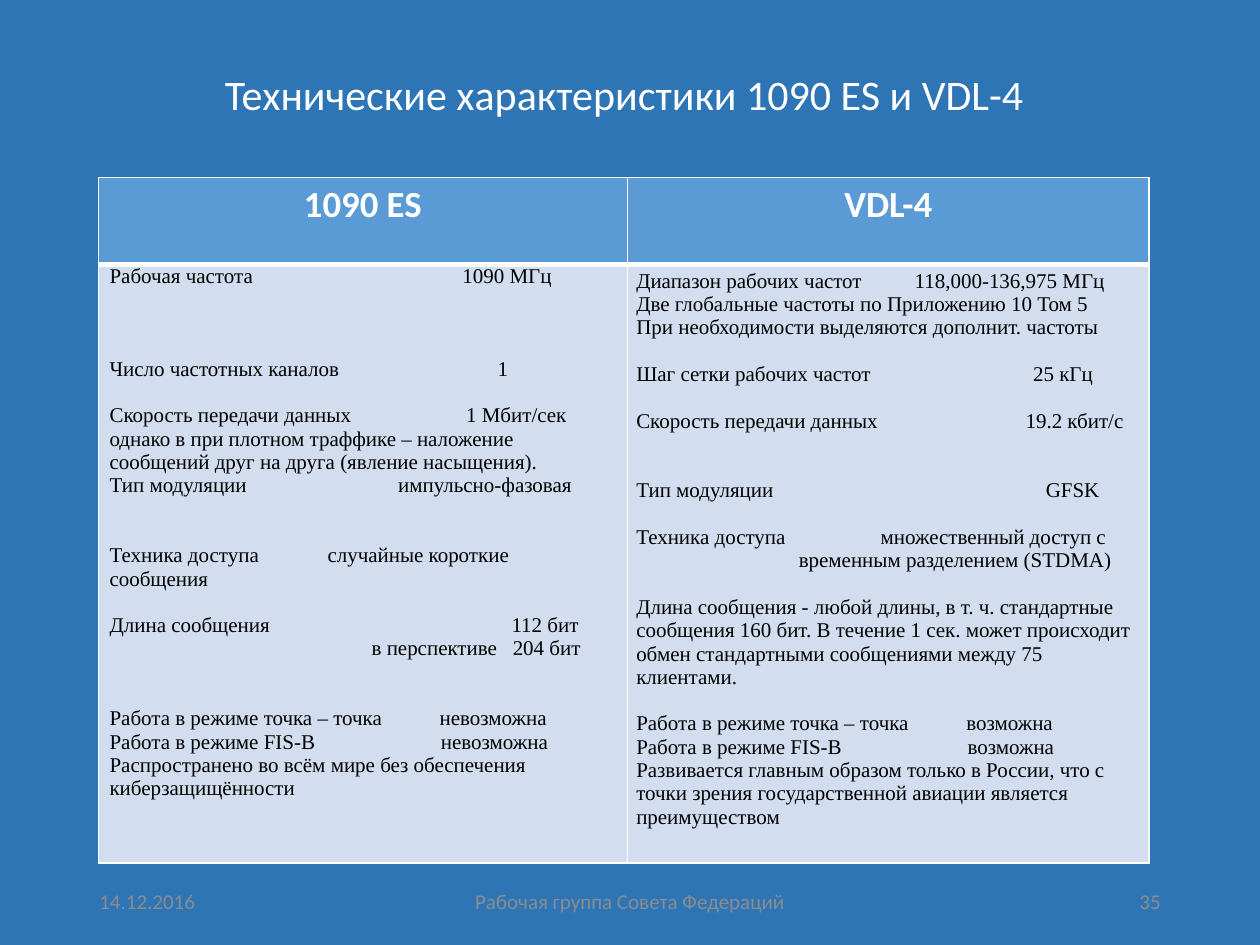
from dataclasses import dataclass

from lxml.etree import SubElement
from pptx import Presentation
from pptx.dml.color import RGBColor
from pptx.enum.text import MSO_ANCHOR as Anchor, PP_ALIGN as Align
from pptx.oxml.ns import qn
from pptx.util import Inches, Pt

COLORS = {
    "page": "2E75B6",
    "header": "5B9BD5",
    "body": "D2DEEF",
    "white": "FFFFFF",
    "black": "000000",
    "footer": "8C8C8C",
}
LINE_PITCH = 13.3


@dataclass(frozen=True)
class Style:
    size: float
    color: str
    font: str = "Calibri"
    bold: bool = False


@dataclass(frozen=True)
class Label:
    text: str
    box: tuple[float, float, float, float]
    style: Style
    align: Align
    spacing: float = 1.0


@dataclass(frozen=True)
class Entry:
    text: str
    tabs: tuple[float, ...] = ()
    gap: int = 0


@dataclass(frozen=True)
class Column:
    heading: str
    width: float
    insets: tuple[float, float]
    entries: tuple[Entry, ...]


TITLE = Style(24, "white")
HEADING = Style(21, "white", bold=True)
BODY = Style(12, "black", "Times New Roman")
FOOTER = Style(12, "footer")

LABELS = [
    Label("Технические характеристики 1090 ES и VDL-4",
          (0.81, 0.22, 8.29, 1.09), TITLE, Align.CENTER, 0.9),
    Label("14.12.2016", (0.69, 6.95, 2.25, 0.4), FOOTER, Align.LEFT),
    Label("Рабочая группа Совета Федераций",
          (3.31, 6.95, 3.38, 0.4), FOOTER, Align.CENTER),
    Label("35", (7.06, 6.95, 2.25, 0.4), FOOTER, Align.RIGHT),
]

COLUMNS = [
    Column("1090 ES", 4.2, (0.09, 0), (
        Entry("Рабочая частота\t1090 МГц", (2.8,)),
        Entry("Число частотных каналов\t1", (3.08,), 3),
        Entry("Скорость передачи данных\t1 Мбит/сек", (2.83,), 1),
        Entry("однако в при плотном траффике – наложение "
              "сообщений друг на друга (явление насыщения)."),
        Entry("Тип модуляции\tимпульсно-фазовая", (2.29,)),
        Entry("Техника доступа\tслучайные короткие\vсообщения", (1.73,), 2),
        Entry("Длина сообщения\t112 бит", (3.19,), 1),
        Entry("\tв перспективе\t204 бит", (2.08, 3.2)),
        Entry("Работа в режиме точка – точка\tневозможна", (2.62,), 2),
        Entry("Работа в режиме FIS-B\tневозможна", (2.63,)),
        Entry("Распространено во всём мире без обеспечения киберзащищённости"),
    )),
    Column("VDL-4", 4.14, (0.07, 0.04), (
        Entry("Диапазон рабочих частот\t118,000-136,975 МГц", (2.21,)),
        Entry("Две глобальные частоты по Приложению 10 Том 5"),
        Entry("При необходимости выделяются дополнит. частоты"),
        Entry("Шаг сетки рабочих частот\t25 кГц", (3.15,), 1),
        Entry("Скорость передачи данных\t19.2 кбит/с", (3.09,), 1),
        Entry("Тип модуляции\tGFSK", (3.25,), 2),
        Entry("Техника доступа\tмножественный доступ с", (1.94,), 1),
        Entry("\tвременным разделением (STDMA)", (1.29,)),
        Entry("Длина сообщения - любой длины, в т. ч. стандартные "
              "сообщения 160 бит. В течение 1 сек. может происходит "
              "обмен стандартными сообщениями между 75 клиентами.", gap=1),
        Entry("Работа в режиме точка – точка\tвозможна", (2.62,), 1),
        Entry("Работа в режиме FIS-B\tвозможна", (2.63,)),
        Entry("Развивается главным образом только в России, что с "
              "точки зрения государственной авиации является преимуществом"),
    )),
]


def rgb(name: str) -> RGBColor:
    return RGBColor.from_string(COLORS[name])


def write(para, text: str, style: Style, align: Align) -> None:
    para.text = text
    para.alignment = align
    for span in para.runs:
        span.font.size = Pt(style.size)
        span.font.name = style.font
        span.font.bold = style.bold
        span.font.color.rgb = rgb(style.color)


def add_label(page, label: Label) -> None:
    box = page.shapes.add_textbox(*map(Inches, label.box))
    frame = box.text_frame
    frame.word_wrap = True
    frame.vertical_anchor = Anchor.MIDDLE
    para = frame.paragraphs[0]
    write(para, label.text, label.style, label.align)
    para.line_spacing = label.spacing


def set_tabs(para, tabs: tuple[float, ...]) -> None:
    stops = SubElement(para._p.get_or_add_pPr(), qn("a:tabLst"))
    for position in tabs:
        SubElement(stops, qn("a:tab"), pos=str(Inches(position)), algn="l")


def style_cell(cell, fill: str, insets: tuple[float, float],
               top: float, bottom: float) -> None:
    cell.margin_left = cell.margin_right = Inches(insets[0])
    cell.margin_top = cell.margin_bottom = Inches(insets[1])
    cell.vertical_anchor = Anchor.TOP
    properties = cell._tc.get_or_add_tcPr()
    for side, width in (("L", 1), ("R", 1), ("T", top), ("B", bottom)):
        line = SubElement(properties, qn(f"a:ln{side}"), w=str(Pt(width)))
        paint = SubElement(line, qn("a:solidFill"))
        SubElement(paint, qn("a:srgbClr"), val=COLORS["white"])
    cell.fill.solid()
    cell.fill.fore_color.rgb = rgb(fill)


def add_comparison(page, columns: list[Column]) -> None:
    heights = (0.69, 4.75)
    width = sum(column.width for column in columns)
    table = page.shapes.add_table(
        len(heights), len(columns), Inches(0.78), Inches(1.41),
        Inches(width), Inches(sum(heights))).table
    for row, height in zip(table.rows, heights):
        row.height = Inches(height)
    for index, column in enumerate(columns):
        table.columns[index].width = Inches(column.width)
        heading, body = table.cell(0, index), table.cell(1, index)
        style_cell(heading, "header", (0.07, 0.04), 1, 3)
        style_cell(body, "body", column.insets, 3, 1)
        write(heading.text_frame.paragraphs[0], column.heading,
              HEADING, Align.CENTER)
        frame = body.text_frame
        for number, entry in enumerate(column.entries):
            para = frame.add_paragraph() if number else frame.paragraphs[0]
            write(para, entry.text, BODY, Align.LEFT)
            para.space_before = Pt(entry.gap * LINE_PITCH)
            if entry.tabs:
                set_tabs(para, entry.tabs)


def main() -> None:
    deck = Presentation()
    deck.slide_width, deck.slide_height = Inches(10), Inches(7.5)
    page = deck.slides.add_slide(deck.slide_layouts[6])
    page.background.fill.solid()
    page.background.fill.fore_color.rgb = rgb("page")
    add_comparison(page, COLUMNS)
    for label in LABELS:
        add_label(page, label)
    deck.save("out.pptx")


if __name__ == "__main__":
    main()
